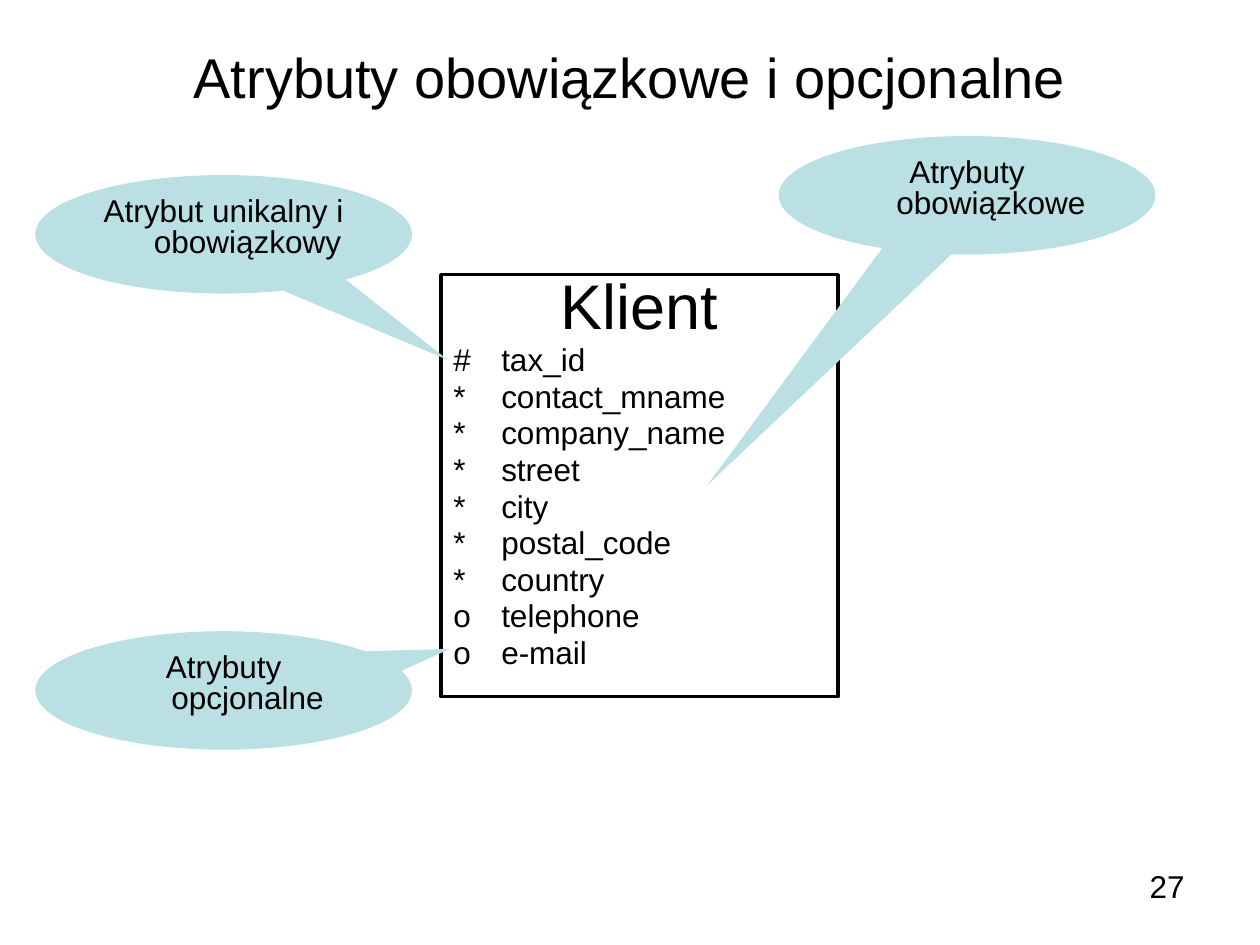
from lxml.etree import SubElement
from pptx import Presentation
from pptx.dml.color import RGBColor
from pptx.enum.shapes import MSO_SHAPE
from pptx.enum.text import MSO_ANCHOR, PP_ALIGN
from pptx.oxml.ns import qn
from pptx.util import Inches, Pt

COLORS = {"text": "000000", "paper": "FFFFFF", "callout": "BBE0E3"}
FONT = "Arial"
HANGING = 0.38

TITLE = "Atrybuty obowiązkowe i opcjonalne"
PAGE_NUMBER = "27"
ENTITY = "Klient"
ATTRIBUTES = [
    ("#", "tax_id"),
    ("*", "contact_mname"),
    ("*", "company_name"),
    ("*", "street"),
    ("*", "city"),
    ("*", "postal_code"),
    ("*", "country"),
    ("o", "telephone"),
    ("o", "e-mail"),
]
CALLOUT_SIZE = (2.99, 0.94)
# text, (left, top), pointer tip relative to the callout's centre and size
CALLOUTS = [
    ("Atrybut unikalny i obowiązkowy", (0.28, 1.39), (0.595, 1.06)),
    ("Atrybuty obowiązkowe", (6.18, 1.08), (-0.69, 2.45)),
    ("Atrybuty opcjonalne", (0.28, 5.01), (0.6, -0.35)),
]


def color(name):
    return RGBColor.from_string(COLORS[name])


def write(shape, text, size=18, align=PP_ALIGN.LEFT, anchor=MSO_ANCHOR.TOP,
          hanging=False, new_paragraph=False):
    frame = shape.text_frame
    frame.word_wrap = True
    frame.vertical_anchor = anchor
    paragraph = frame.add_paragraph() if new_paragraph else frame.paragraphs[0]
    paragraph.alignment = align
    if hanging:
        hang_indent(paragraph)
    run = paragraph.add_run()
    run.text = text
    run.font.name = FONT
    run.font.size = Pt(size)
    run.font.color.rgb = color("text")


def hang_indent(paragraph):
    """Hanging indent, tight lines and 20 % of a line before the paragraph."""
    paragraph.line_spacing = 0.8
    paragraph.space_before = Pt(0)
    properties = paragraph._p.get_or_add_pPr()
    properties.set("marL", str(Inches(HANGING)))
    properties.set("indent", str(-Inches(HANGING)))
    before = properties.find(qn("a:spcBef"))
    before.clear()
    SubElement(before, qn("a:spcPct"), val="20000")


def add_box(slide, preset, bounds, fill):
    shape = slide.shapes.add_shape(preset, *map(Inches, bounds))
    shape.shadow.inherit = False
    shape.fill.solid()
    shape.fill.fore_color.rgb = color(fill)
    shape.line.fill.background()
    return shape


def main():
    deck = Presentation()
    deck.slide_width, deck.slide_height = Inches(10), Inches(7.5)
    slide = deck.slides.add_slide(deck.slide_layouts[6])

    title = slide.shapes.add_textbox(*map(Inches, (0.5, 0.3, 9, 0.61)))
    write(title, TITLE, size=32, align=PP_ALIGN.CENTER, anchor=MSO_ANCHOR.MIDDLE)
    page = slide.shapes.add_textbox(*map(Inches, (7.17, 6.83, 2.33, 0.52)))
    write(page, PAGE_NUMBER, align=PP_ALIGN.RIGHT)

    entity = add_box(slide, MSO_SHAPE.RECTANGLE, (3.5, 2.18, 3.15, 3.35), "paper")
    entity.line.color.rgb = color("text")
    entity.line.width = Pt(2)
    write(entity, ENTITY, size=36, align=PP_ALIGN.CENTER, hanging=True)
    for mark, attribute in ATTRIBUTES:
        write(entity, f"{mark}\t{attribute}", hanging=True, new_paragraph=True)

    for text, corner, tip in CALLOUTS:
        callout = add_box(slide, MSO_SHAPE.OVAL_CALLOUT, corner + CALLOUT_SIZE, "callout")
        callout.adjustments[0], callout.adjustments[1] = tip
        write(callout, text, align=PP_ALIGN.CENTER, hanging=True)

    deck.save("out.pptx")


if __name__ == "__main__":
    main()
